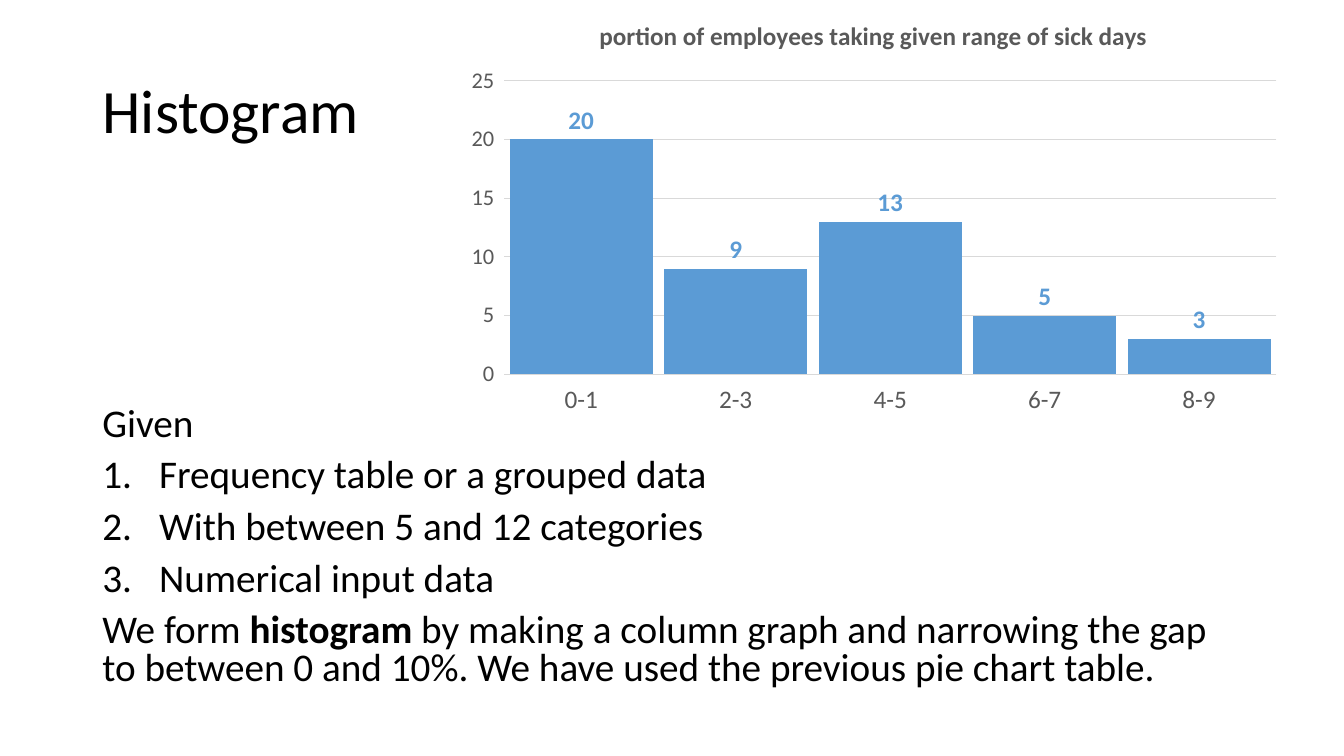
from dataclasses import dataclass

from lxml import etree
from pptx import Presentation
from pptx.chart.data import CategoryChartData
from pptx.dml.color import RGBColor
from pptx.enum.chart import XL_CHART_TYPE, XL_LABEL_POSITION
from pptx.enum.text import MSO_ANCHOR, PP_ALIGN
from pptx.oxml import parse_xml
from pptx.oxml.ns import nsdecls, qn
from pptx.util import Cm, Pt

COLUMNS = XL_CHART_TYPE.COLUMN_CLUSTERED
ABOVE_COLUMN = XL_LABEL_POSITION.OUTSIDE_END
MIDDLE, TOP = MSO_ANCHOR.MIDDLE, MSO_ANCHOR.TOP
LEFT = PP_ALIGN.LEFT


@dataclass(frozen=True)
class Theme:
    font: str = "Calibri"
    text: RGBColor = RGBColor(0x00, 0x00, 0x00)
    chart_text: RGBColor = RGBColor(0x59, 0x59, 0x59)
    column: RGBColor = RGBColor(0x5B, 0x9B, 0xD5)
    grid: RGBColor = RGBColor(0xD9, 0xD9, 0xD9)
    title_size: Pt = Pt(44)
    body_size: Pt = Pt(28)
    chart_size: Pt = Pt(18)
    value_axis_size: Pt = Pt(16)


THEME = Theme()
SICK_DAYS = {"0-1": 20, "2-3": 9, "4-5": 13, "6-7": 5, "8-9": 3}
CHART_TITLE = "portion of employees taking given range of sick days"
CONDITIONS = [
    "Frequency table or a grouped data",
    "With between 5 and 12 categories",
    "Numerical input data",
]
CONCLUSION = [
    ("We form ", False),
    ("histogram", True),
    (" by making a column graph and narrowing the gap to between 0 and 10%. "
     "We have used the previous pie chart table.", False),
]


def style_font(font, size, color, bold=False):
    font.name = THEME.font
    font.size = size
    font.bold = bold
    font.color.rgb = color


def add_run(paragraph, text, size, bold=False):
    run = paragraph.add_run()
    run.text = text
    style_font(run.font, size, THEME.text, bold)


def number_paragraph(paragraph):
    properties = paragraph._p.get_or_add_pPr()
    properties.set("marL", str(Cm(1.43)))
    properties.set("indent", str(-Cm(1.43)))
    numbering = etree.SubElement(properties, qn("a:buAutoNum"))
    numbering.set("type", "arabicPeriod")


def fill_title(title, text):
    title.left, title.top = Cm(2.33), Cm(1.01)
    title.width, title.height = Cm(29.21), Cm(3.68)
    frame = title.text_frame
    frame.vertical_anchor = MIDDLE
    heading = frame.paragraphs[0]
    heading.alignment = LEFT
    heading.line_spacing = 0.9
    add_run(heading, text, THEME.title_size)


def add_explanation(slide):
    box = slide.shapes.add_textbox(Cm(2.33), Cm(10.13), Cm(29.21), Cm(7.24))
    frame = box.text_frame
    frame.word_wrap = True
    frame.vertical_anchor = TOP
    lines = [([("Given", False)], False)]
    lines += [([(condition, False)], True) for condition in CONDITIONS]
    lines.append((CONCLUSION, False))
    for index, (runs, numbered) in enumerate(lines):
        paragraph = frame.add_paragraph() if index else frame.paragraphs[0]
        if numbered:
            number_paragraph(paragraph)
        paragraph.line_spacing = 0.8
        paragraph.space_before = Pt(10 if index else 0)
        for text, bold in runs:
            add_run(paragraph, text, THEME.body_size, bold)


def place_plot(chart, **fractions):
    """Fix the inner plot area as fractions of the chart frame."""
    plot_area = chart._chartSpace.chart.plotArea
    for old_layout in plot_area.findall(qn("c:layout")):
        plot_area.remove(old_layout)
    sizes = "".join(f'<c:{key} val="{val}"/>' for key, val in fractions.items())
    plot_area.insert(0, parse_xml(
        f'<c:layout {nsdecls("c")}><c:manualLayout>'
        '<c:layoutTarget val="inner"/><c:xMode val="edge"/><c:yMode val="edge"/>'
        f'{sizes}</c:manualLayout></c:layout>'))


def style_axes(chart):
    categories, values = chart.category_axis, chart.value_axis
    for axis, size in ((categories, THEME.chart_size),
                       (values, THEME.value_axis_size)):
        style_font(axis.tick_labels.font, size, THEME.chart_text)
        axis.format.line.fill.background()
    categories.has_major_gridlines = False
    values.has_major_gridlines = True
    values.minimum_scale, values.maximum_scale, values.major_unit = 0, 25, 5
    grid_line = values.major_gridlines.format.line
    grid_line.color.rgb = THEME.grid
    grid_line.width = Pt(0.75)


def add_histogram(slide):
    sick_days = CategoryChartData()
    sick_days.categories = list(SICK_DAYS)
    sick_days.add_series("Series 1", list(SICK_DAYS.values()))
    chart = slide.shapes.add_chart(
        COLUMNS, Cm(11.43), Cm(0), Cm(21.16), Cm(10.72), sick_days).chart
    style_font(chart.font, THEME.chart_size, THEME.chart_text)
    chart.has_legend = False

    chart.has_title = True
    chart.chart_title.include_in_layout = False
    heading = chart.chart_title.text_frame.paragraphs[0].add_run()
    heading.text = CHART_TITLE
    style_font(heading.font, THEME.chart_size, THEME.chart_text, bold=True)

    style_axes(chart)
    place_plot(chart, x=0.06, y=0.19, w=0.92, h=0.69)
    plot = chart.plots[0]
    plot.gap_width = 8
    plot.vary_by_categories = False
    columns = plot.series[0]
    columns.format.fill.solid()
    columns.format.fill.fore_color.rgb = THEME.column
    labels = columns.data_labels
    labels.show_value = True
    labels.position = ABOVE_COLUMN
    style_font(labels.font, THEME.chart_size, THEME.column, bold=True)


def main():
    presentation = Presentation()
    presentation.slide_width, presentation.slide_height = Cm(33.87), Cm(19.05)
    slide = presentation.slides.add_slide(
        presentation.slide_layouts.get_by_name("Title Only"))
    fill_title(slide.shapes.title, "Histogram")
    add_explanation(slide)
    add_histogram(slide)
    presentation.save("out.pptx")


if __name__ == "__main__":
    main()
